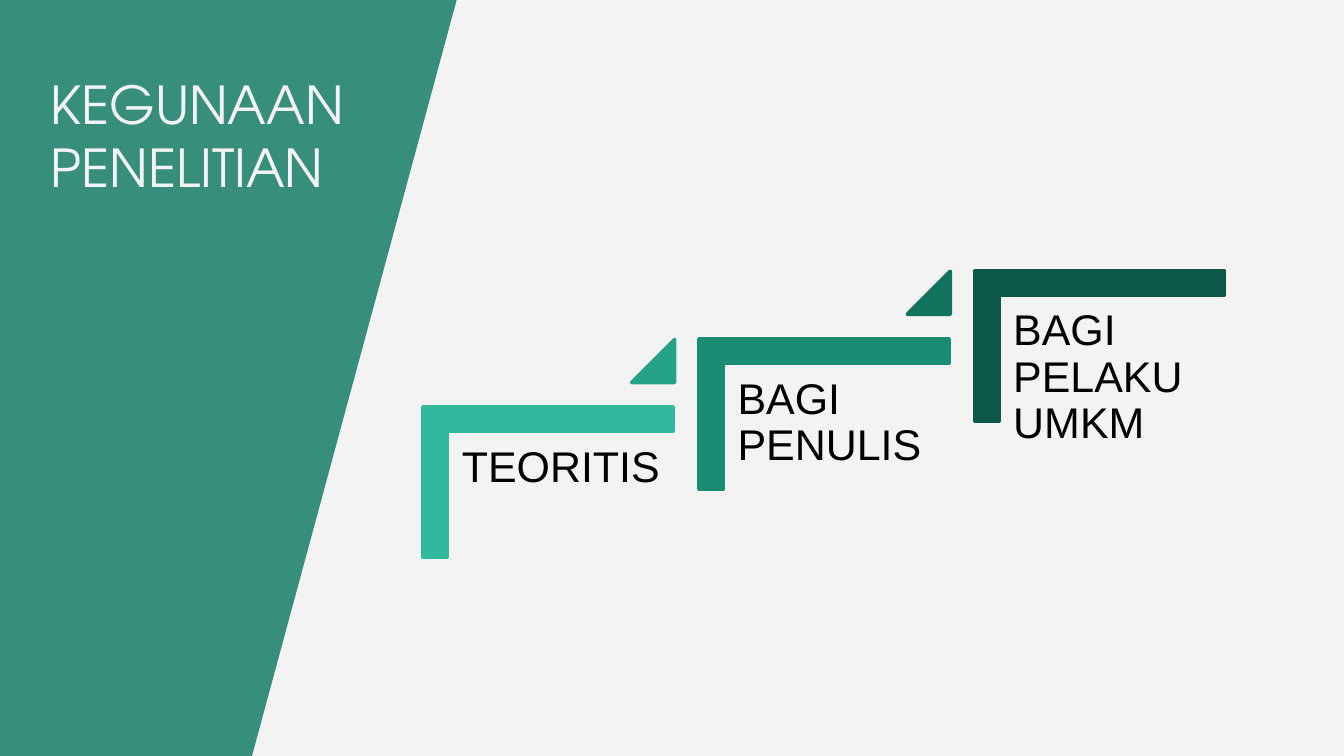
from dataclasses import dataclass

from pptx import Presentation
from pptx.dml.color import RGBColor
from pptx.enum.shapes import MSO_SHAPE
from pptx.enum.text import MSO_ANCHOR, MSO_AUTO_SIZE, PP_ALIGN
from pptx.util import Cm, Pt

PALE, GREEN, BLACK = "F3F3F3", "378E7B", "000000"
RUN, RISE = 5.21, 1.29  # offset from one step to the next, in cm
FRAME = {
    "word_wrap": True,
    "auto_size": MSO_AUTO_SIZE.NONE,
    "vertical_anchor": MSO_ANCHOR.TOP,
    "margin_left": Cm(0.25),
    "margin_right": Cm(0.25),
    "margin_top": Cm(0.25),
    "margin_bottom": Cm(0.25),
}


@dataclass
class Step:
    label: str
    color: str
    arrow: str = ""


STEPS = [
    Step("TEORITIS", "30B99C", "24A388"),
    Step("BAGI PENULIS", "1A8C74", "12735E"),
    Step("BAGI PELAKU UMKM", "0B5848"),
]


def rgb(code: str) -> RGBColor:
    return RGBColor.from_string(code)


def paint(shape, color: str, width: float = 0) -> None:
    """Fill the shape and outline it, or drop the outline when width is 0."""
    shape.shadow.inherit = False
    shape.fill.solid()
    shape.fill.fore_color.rgb = rgb(color)
    if width:
        shape.line.color.rgb = rgb(color)
        shape.line.width = Pt(width)
    else:
        shape.line.fill.background()


def write(shape, text: str, size: float, face: str, color: str,
          space: float = 1) -> None:
    frame = shape.text_frame
    for key, value in FRAME.items():
        setattr(frame, key, value)
    para = frame.paragraphs[0]
    para.alignment = PP_ALIGN.LEFT
    para.line_spacing = space
    run = para.add_run()
    run.text = text
    for key, value in {"size": Pt(size), "name": face}.items():
        setattr(run.font, key, value)
    run.font.color.rgb = rgb(color)


def draw_panel(shapes) -> None:
    """Draw the slanted green side panel."""
    pen = shapes.build_freeform(Cm(0.74), Cm(-0.03))
    pen.add_line_segments([(Cm(8.64), Cm(-0.03)), (Cm(4.72), Cm(14.45)),
                           (Cm(0.74), Cm(14.45))])
    paint(pen.convert_to_shape(), GREEN)
    edge = shapes.add_shape(MSO_SHAPE.RECTANGLE, Cm(0), Cm(-0.03),
                            Cm(1.55), Cm(14.35))
    paint(edge, GREEN)


def draw_step(shapes, step: Step, index: int) -> None:
    x, y = 8.94 + index * RUN, 6.76 - index * RISE
    corner = shapes.add_shape(MSO_SHAPE.CORNER, Cm(x), Cm(y),
                              Cm(2.84), Cm(4.72))
    corner.rotation = 90
    for side in range(2):
        corner.adjustments[side] = 0.16
    paint(corner, step.color, 2)

    box = shapes.add_textbox(Cm(x - 0.46), Cm(y + 1.41), Cm(4.27), Cm(3.73))
    write(box, step.label, 23, "Arial", BLACK, 0.9)

    if step.arrow:
        arrow = shapes.add_shape(MSO_SHAPE.ISOSCELES_TRIANGLE, Cm(x + 3),
                                 Cm(y - 0.34), Cm(0.81), Cm(0.81))
        arrow.adjustments[0] = 1
        paint(arrow, step.arrow, 2)


def place_title(shapes) -> None:
    title = shapes.title
    spot = {"left": 0.71, "top": 1.12, "width": 6.58, "height": 4.52}
    for key, value in spot.items():
        setattr(title, key, Cm(value))
    write(title, "KEGUNAAN PENELITIAN", 28, "TeX Gyre Adventor", PALE)
    title.element.getparent().append(title.element)  # above the panel


def main() -> None:
    deck = Presentation()
    deck.slide_width, deck.slide_height = Cm(25.4), Cm(14.29)
    slide = deck.slides.add_slide(deck.slide_layouts[5])
    slide.background.fill.solid()
    slide.background.fill.fore_color.rgb = rgb(PALE)
    draw_panel(slide.shapes)
    place_title(slide.shapes)
    for index, step in enumerate(STEPS):
        draw_step(slide.shapes, step, index)
    deck.save("out.pptx")


if __name__ == "__main__":
    main()
